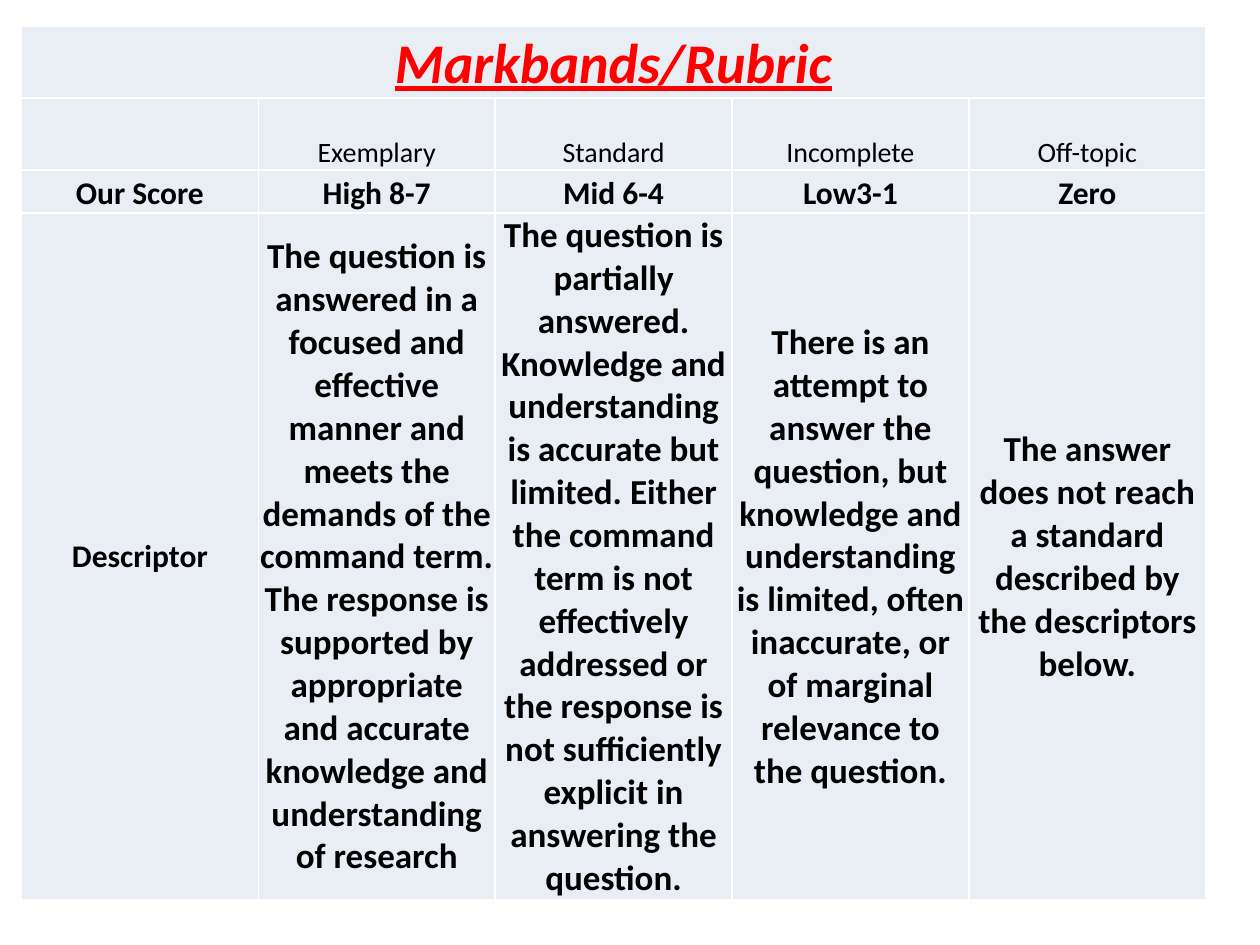
from lxml import etree
from pptx import Presentation
from pptx.dml.color import RGBColor
from pptx.enum.text import MSO_ANCHOR, PP_ALIGN
from pptx.oxml.ns import qn
from pptx.util import Inches, Pt

CENTER = PP_ALIGN.CENTER
BOTTOM, MIDDLE = MSO_ANCHOR.BOTTOM, MSO_ANCHOR.MIDDLE
BLANK_LAYOUT = 6

RED = RGBColor(0xFF, 0x00, 0x00)
BLACK = RGBColor(0x00, 0x00, 0x00)
WHITE = RGBColor(0xFF, 0xFF, 0xFF)
PALE_BLUE = RGBColor(0xE9, 0xED, 0xF4)

COLUMN_WIDTH = 1.88
ROW_HEIGHTS = [0.57, 0.57, 0.34, 5.34]

LEVELS = ["", "Exemplary", "Standard", "Incomplete", "Off-topic"]
SCORES = ["Our Score", "High 8-7", "Mid 6-4", "Low3-1", "Zero"]
DESCRIPTORS = [
    "Descriptor",
    "The question is answered in a focused and effective manner and meets the "
    "demands of the command term. The response is supported by appropriate and "
    "accurate knowledge and understanding of research",
    "The question is partially answered. Knowledge and understanding is accurate "
    "but limited. Either the command term is not effectively addressed or the "
    "response is not sufficiently explicit in answering the question.",
    "There is an attempt to answer the question, but knowledge and understanding "
    "is limited, often inaccurate, or of marginal relevance to the question.",
    "The answer does not reach a standard described by the descriptors below.",
]


class RubricSlide:
    """Holds the table style and the current slide."""

    font_name = "Calibri"
    fill = PALE_BLUE
    border = WHITE
    border_width = Pt(1)

    def __init__(self, deck):
        self.page = deck.slides.add_slide(deck.slide_layouts[BLANK_LAYOUT])

    def add_table(self, left, top, columns, column_width, row_heights):
        frame = self.page.shapes.add_table(
            len(row_heights), columns, Inches(left), Inches(top),
            Inches(columns * column_width), Inches(sum(row_heights)))
        table = frame.table
        for column in table.columns:
            column.width = Inches(column_width)
        for row, height in zip(table.rows, row_heights):
            row.height = Inches(height)
        for cell in table.iter_cells():
            self.style_cell(cell)
        return table

    def style_cell(self, cell):
        cell.margin_left = cell.margin_right = cell.margin_top = Inches(0.01)
        cell.margin_bottom = 0
        cell.fill.solid()
        cell.fill.fore_color.rgb = self.fill
        # Border lines come before the fill in the cell properties
        properties = cell._tc.get_or_add_tcPr()
        for position, side in enumerate(("a:lnL", "a:lnR", "a:lnT", "a:lnB")):
            line = etree.Element(qn(side), w=str(self.border_width))
            solid = etree.SubElement(line, qn("a:solidFill"))
            etree.SubElement(solid, qn("a:srgbClr"), val=str(self.border))
            properties.insert(position, line)

    def write_cell(self, cell, text, size, bold=True, anchor=BOTTOM, color=BLACK):
        cell.text_frame.text = text
        cell.vertical_anchor = anchor
        para = cell.text_frame.paragraphs[0]
        para.alignment = CENTER
        for font in [para.font] + [span.font for span in para.runs]:
            font.name = self.font_name
            font.size = Pt(size)
            font.bold = bold
            font.color.rgb = color

    def write_row(self, table, row, texts, size, **style):
        for column, text in enumerate(texts):
            self.write_cell(table.cell(row, column), text, size, **style)


def main():
    deck = Presentation()
    deck.slide_width, deck.slide_height = Inches(10), Inches(7.5)
    rubric = RubricSlide(deck)
    table = rubric.add_table(0.17, 0.21, len(LEVELS), COLUMN_WIDTH, ROW_HEIGHTS)

    # Heading across all columns
    heading = table.cell(0, 0)
    heading.merge(table.cell(0, len(LEVELS) - 1))
    rubric.write_cell(heading, "Markbands/Rubric", 32, color=RED)
    heading_font = heading.text_frame.paragraphs[0].runs[0].font
    heading_font.italic = heading_font.underline = True

    # Levels, scores and descriptors
    rubric.write_row(table, 1, LEVELS, 16, bold=False)
    rubric.write_row(table, 2, SCORES, 18)
    rubric.write_row(table, 3, DESCRIPTORS, 20, anchor=MIDDLE)
    rubric.write_cell(table.cell(3, 0), DESCRIPTORS[0], 18, anchor=MIDDLE)

    deck.save("out.pptx")


if __name__ == "__main__":
    main()
